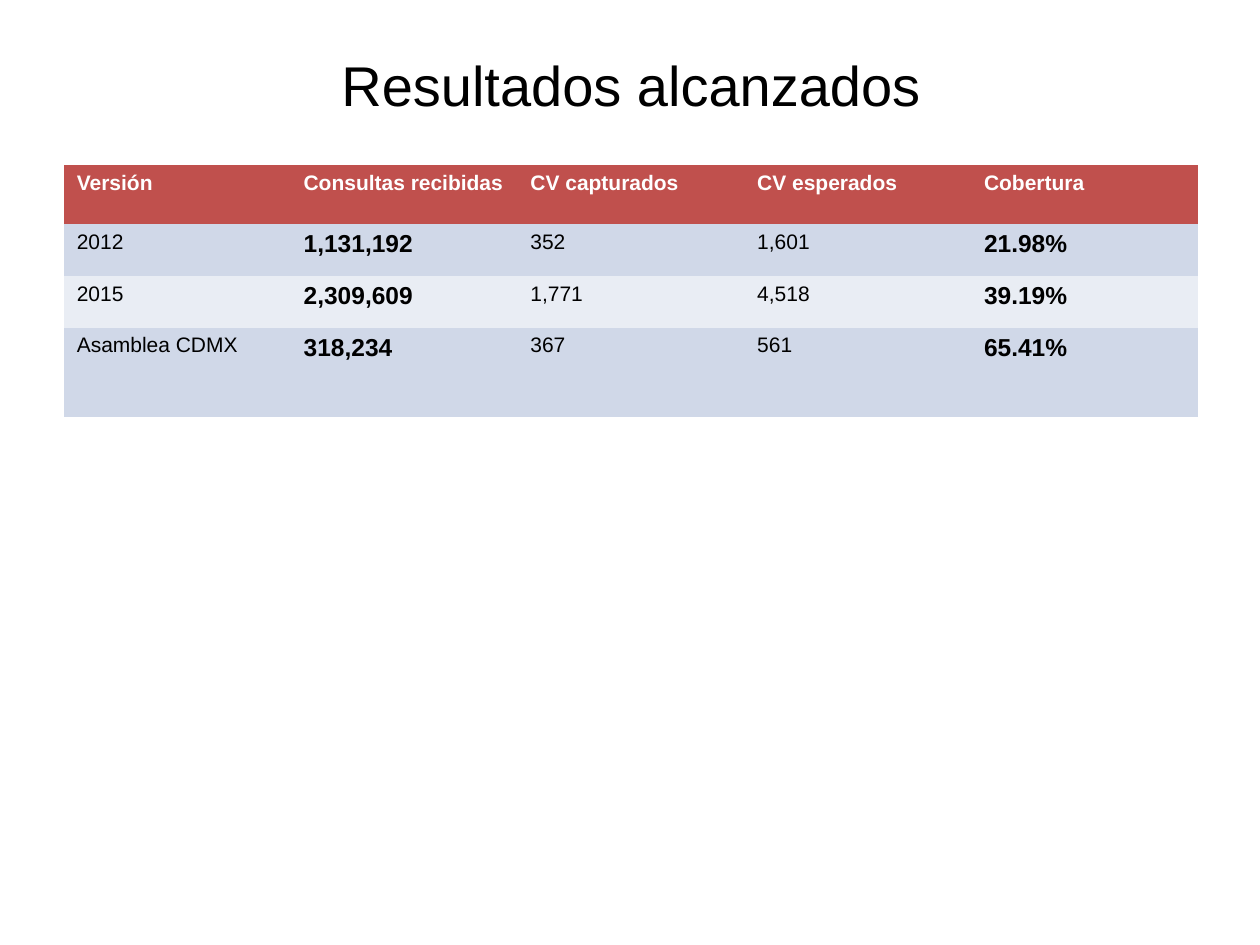
from pptx import Presentation
from pptx.dml.color import RGBColor
from pptx.enum.text import MSO_ANCHOR, PP_ALIGN
from pptx.oxml.ns import qn
from pptx.util import Inches, Pt

COLORS = {
    "text": "000000",
    "header_text": "FFFFFF",
    "header": "C0504D",
    "odd_row": "D0D8E8",
    "even_row": "E9EDF4",
}
FONT = "Arial"
NO_STYLE_NO_GRID = "{2D5ABB26-0587-4C30-8999-92F81FD0307C}"
LEFT, WIDTH = 0.51, 9
ROW_HEIGHTS = [0.47, 0.41, 0.41, 0.71]
HIGHLIGHTED_COLUMNS = {1, 4}
RESULTS = [
    ["Versión", "Consultas recibidas", "CV capturados", "CV esperados", "Cobertura"],
    ["2012", "1,131,192", "352", "1,601", "21.98%"],
    ["2015", "2,309,609", "1,771", "4,518", "39.19%"],
    ["Asamblea CDMX", "318,234", "367", "561", "65.41%"],
]


def write(frame, text, size=12, bold=False, color="text", align=PP_ALIGN.LEFT):
    paragraph = frame.paragraphs[0]
    paragraph.alignment = align
    run = paragraph.add_run()
    run.text = text
    run.font.name = FONT
    run.font.size = Pt(size)
    run.font.bold = bold
    run.font.color.rgb = RGBColor.from_string(COLORS[color])


def add_title(slide, text):
    title = slide.shapes.title
    title.left, title.top = Inches(LEFT), Inches(0.35)
    title.width, title.height = Inches(WIDTH), Inches(0.64)
    title.text_frame.vertical_anchor = MSO_ANCHOR.MIDDLE
    write(title.text_frame, text, size=32, align=PP_ALIGN.CENTER)


def fill_cell(cell, text, row, column):
    header = row == 0
    highlighted = not header and column in HIGHLIGHTED_COLUMNS
    band = "header" if header else "odd_row" if row % 2 else "even_row"
    cell.fill.solid()
    cell.fill.fore_color.rgb = RGBColor.from_string(COLORS[band])
    write(
        cell.text_frame,
        text,
        size=14 if highlighted else 12,
        bold=header or highlighted,
        color="header_text" if header else "text",
    )


def add_results(slide, results):
    columns = len(results[0])
    table = slide.shapes.add_table(
        len(results), columns, Inches(LEFT), Inches(1.31),
        Inches(WIDTH), Inches(sum(ROW_HEIGHTS)),
    ).table
    table._tbl.tblPr.find(qn("a:tableStyleId")).text = NO_STYLE_NO_GRID
    for column in table.columns:
        column.width = Inches(WIDTH / columns)
    for row, (values, height) in enumerate(zip(results, ROW_HEIGHTS)):
        table.rows[row].height = Inches(height)
        for column, value in enumerate(values):
            fill_cell(table.cell(row, column), value, row, column)


def main():
    deck = Presentation()
    deck.slide_width, deck.slide_height = Inches(10), Inches(7.5)
    slide = deck.slides.add_slide(deck.slide_layouts[5])
    add_title(slide, "Resultados alcanzados")
    add_results(slide, RESULTS)
    deck.save("out.pptx")


if __name__ == "__main__":
    main()
